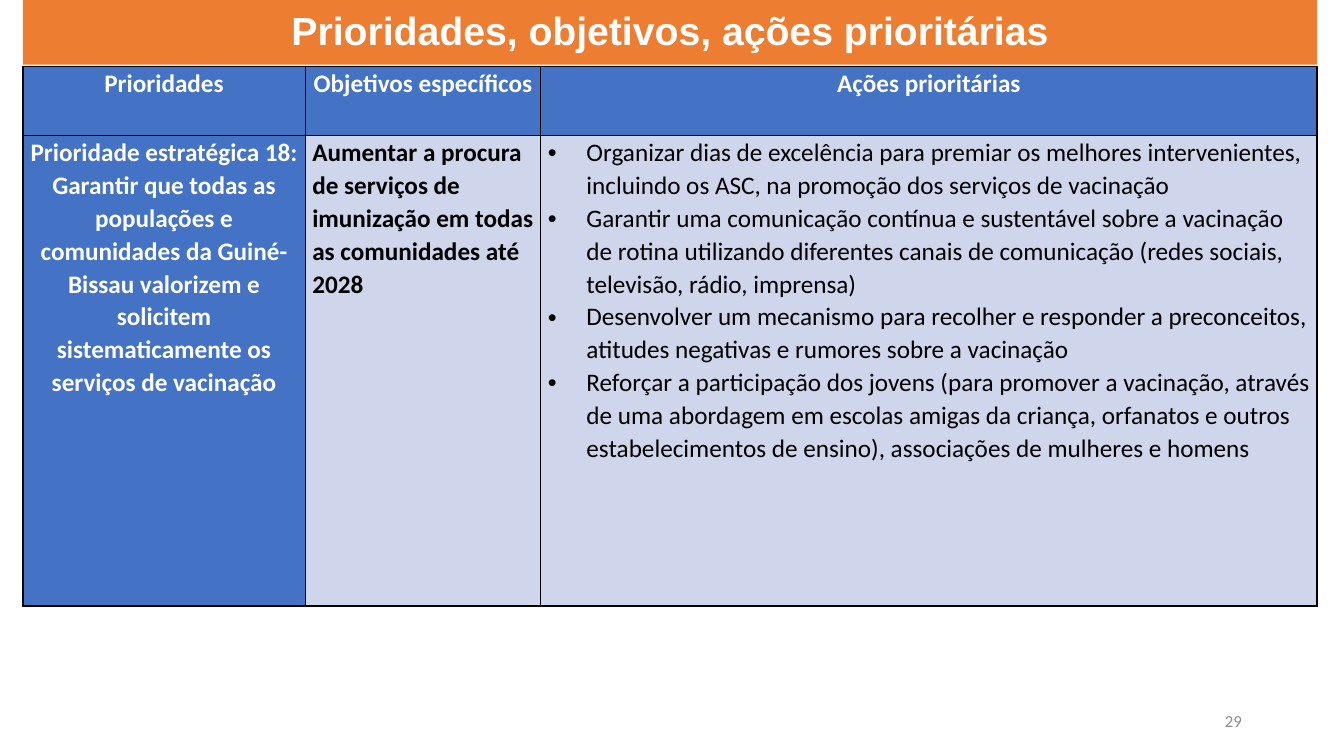
from lxml import etree
from pptx import Presentation
from pptx.dml.color import RGBColor
from pptx.enum.shapes import MSO_SHAPE
from pptx.enum.text import MSO_ANCHOR, PP_ALIGN
from pptx.oxml import parse_xml
from pptx.oxml.ns import nsdecls, qn
from pptx.util import Cm, Pt

ORANGE = RGBColor(0xED, 0x7D, 0x31)
BLUE = RGBColor(0x44, 0x72, 0xC4)
PALE_BLUE = RGBColor(0xCF, 0xD5, 0xEA)
WHITE = RGBColor(0xFF, 0xFF, 0xFF)
BLACK = RGBColor(0x00, 0x00, 0x00)
GRAY = RGBColor(0x8C, 0x8C, 0x8C)

LEFT = Cm(0.58)
COLUMN_WIDTHS = [Cm(7.11), Cm(5.94), Cm(19.56)]
ROW_HEIGHTS = [Cm(1.73), Cm(11.86)]
WIDTH = sum(COLUMN_WIDTHS)
BULLET_INDENT = Cm(0.97)

HEADERS = ["Prioridades", "Objetivos específicos", "Ações prioritárias"]
PRIORITY = (
    "Prioridade estratégica 18: Garantir que todas as populações e comunidades "
    "da Guiné-Bissau valorizem e solicitem sistematicamente os serviços de vacinação"
)
OBJECTIVE = (
    "Aumentar a procura de serviços de imunização em todas as comunidades até 2028"
)
ACTIONS = [
    "Organizar dias de excelência para premiar os melhores intervenientes, "
    "incluindo os ASC, na promoção dos serviços de vacinação",
    "Garantir uma comunicação contínua e sustentável sobre a vacinação de rotina "
    "utilizando diferentes canais de comunicação (redes sociais, televisão, rádio, imprensa)",
    "Desenvolver um mecanismo para recolher e responder a preconceitos, "
    "atitudes negativas e rumores sobre a vacinação",
    "Reforçar a participação dos jovens (para promover a vacinação, através de uma "
    "abordagem em escolas amigas da criança, orfanatos e outros estabelecimentos de "
    "ensino), associações de mulheres e homens",
]


def write(frame, texts, size=18, font="Calibri", color=WHITE, bold=False,
          align=PP_ALIGN.LEFT, spacing=1.07, bullet=False):
    frame.word_wrap = True
    for index, text in enumerate(texts):
        paragraph = frame.paragraphs[0] if index == 0 else frame.add_paragraph()
        paragraph.alignment = align
        paragraph.line_spacing = spacing
        if bullet:
            properties = paragraph._p.get_or_add_pPr()
            properties.set("marL", str(BULLET_INDENT))
            properties.set("indent", str(-BULLET_INDENT))
            etree.SubElement(properties, qn("a:buFont")).set("typeface", "Arial")
            etree.SubElement(properties, qn("a:buChar")).set("char", "•")
        run = paragraph.add_run()
        run.text = text
        run.font.size = Pt(size)
        run.font.name = font
        run.font.bold = bold
        run.font.color.rgb = color


presentation = Presentation()
presentation.slide_width = Cm(33.87)
presentation.slide_height = Cm(19.05)
slide = presentation.slides.add_slide(presentation.slide_layouts[6])

title = slide.shapes.add_shape(MSO_SHAPE.RECTANGLE, LEFT, 0, WIDTH, Cm(1.63))
title.shadow.inherit = False
title.fill.solid()
title.fill.fore_color.rgb = ORANGE
title.line.fill.background()
title.text_frame.vertical_anchor = MSO_ANCHOR.MIDDLE
write(title.text_frame, ["Prioridades, objetivos, ações prioritárias"], size=28,
      font="Arial", bold=True, align=PP_ALIGN.CENTER, spacing=0.9)

table = slide.shapes.add_table(
    2, 3, LEFT, Cm(1.68), WIDTH, sum(ROW_HEIGHTS)).table
table.horz_banding = False
for column, width in zip(table.columns, COLUMN_WIDTHS):
    column.width = width
for row, height in zip(table.rows, ROW_HEIGHTS):
    row.height = height

heading = dict(bold=True, align=PP_ALIGN.CENTER)
contents = [([header], BLUE, heading) for header in HEADERS] + [
    ([PRIORITY], BLUE, heading),
    ([OBJECTIVE], PALE_BLUE, dict(color=BLACK, bold=True)),
    (ACTIONS, PALE_BLUE, dict(color=BLACK, bullet=True)),
]
for cell, (texts, fill, style) in zip(table.iter_cells(), contents):
    cell.margin_left = cell.margin_right = Cm(0.18)
    cell.margin_top = cell.margin_bottom = 0
    for side in ("lnL", "lnR", "lnT", "lnB"):
        cell._tc.get_or_add_tcPr().append(parse_xml(
            f'<a:{side} {nsdecls("a")} w="{Pt(1)}"><a:solidFill>'
            f'<a:srgbClr val="{BLACK}"/></a:solidFill></a:{side}>'))
    cell.fill.solid()
    cell.fill.fore_color.rgb = fill
    write(cell.text_frame, texts, **style)

page_number = slide.shapes.add_textbox(Cm(23.93), Cm(17.65), Cm(7.62), Cm(1.02))
page_number.text_frame.vertical_anchor = MSO_ANCHOR.MIDDLE
write(page_number.text_frame, ["29"], size=12, color=GRAY,
      align=PP_ALIGN.RIGHT, spacing=1.0)

presentation.save("out.pptx")
